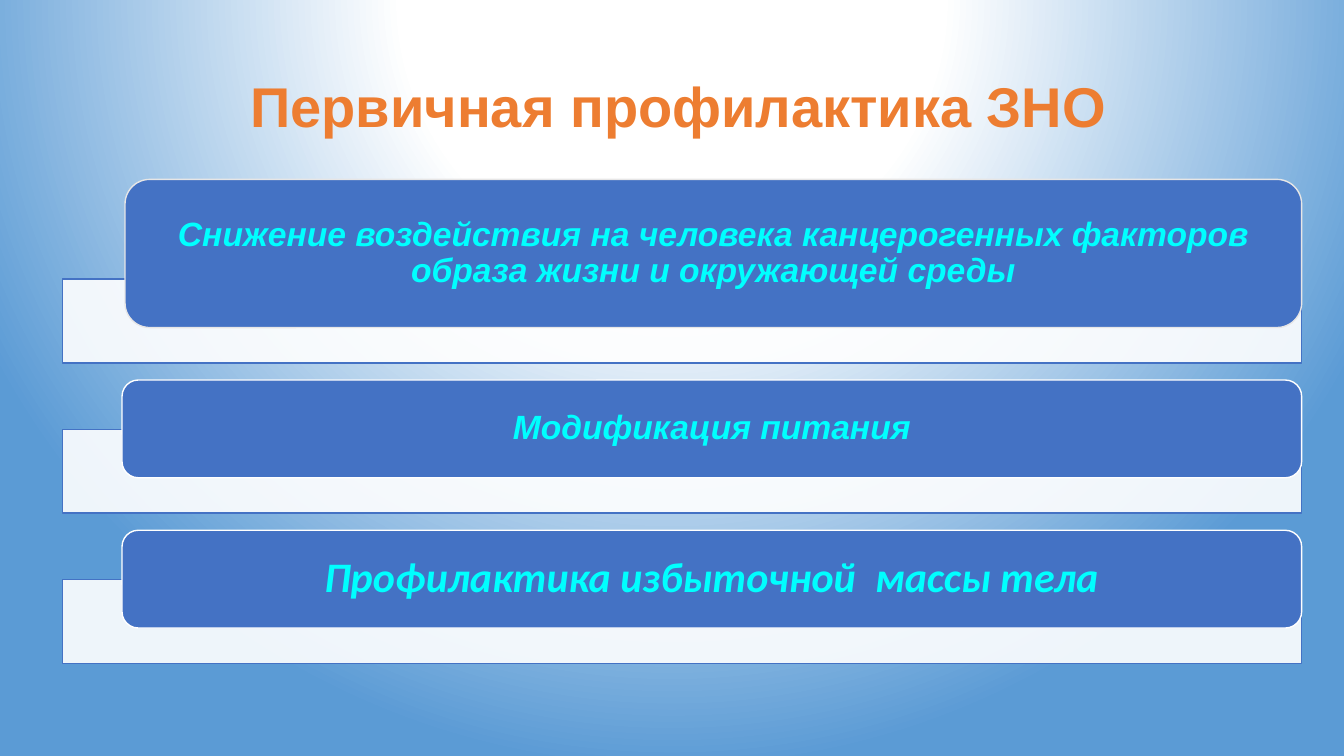
from dataclasses import dataclass

from lxml import etree
from pptx import Presentation
from pptx.dml.color import RGBColor
from pptx.enum.dml import MSO_FILL
from pptx.enum.shapes import MSO_SHAPE
from pptx.enum.text import MSO_ANCHOR, MSO_AUTO_SIZE, PP_ALIGN
from pptx.oxml.ns import qn
from pptx.shapes.autoshape import Shape
from pptx.slide import Slide
from pptx.text.text import TextFrame
from pptx.util import Emu, Inches, Pt

RECTANGLE = MSO_SHAPE.RECTANGLE
ROUNDED = MSO_SHAPE.ROUNDED_RECTANGLE
MIDDLE = MSO_ANCHOR.MIDDLE
NO_AUTOFIT = MSO_AUTO_SIZE.NONE
CENTER = PP_ALIGN.CENTER
GRADIENT = MSO_FILL.GRADIENT

WHITE = RGBColor(0xFF, 0xFF, 0xFF)
SKY = RGBColor(0x5B, 0x9B, 0xD5)
BLUE = RGBColor(0x44, 0x72, 0xC4)
PALE_GREY = RGBColor(0xE7, 0xE6, 0xE6)
ORANGE = RGBColor(0xED, 0x7D, 0x31)
CYAN = RGBColor(0x00, 0xFF, 0xFF)

SLIDE_WIDTH = Inches(13.33)
SLIDE_HEIGHT = Inches(7.5)
TITLE_ONLY = 5

BAR_LEFT = 4.65
RIGHT_EDGE = 96.85
FIRST_BAR_TOP = 36.93
ROW_PITCH = 19.87
BAR_HEIGHT = 11.07
CARD_OVERLAP = 6.4
CARD_INSET = 1.95


@dataclass(frozen=True)
class Measure:
    text: str
    left: float = 9.08
    height: float = 12.93
    outline: RGBColor = WHITE
    font: str = "Arial"
    size: int = 24


MEASURES = [
    Measure(
        "Снижение воздействия на человека канцерогенных факторов образа жизни и окружающей среды",
        left=9.3,
        height=19.6,
        outline=PALE_GREY,
    ),
    Measure("Модификация питания"),
    Measure("Профилактика избыточной  массы тела", font="Calibri", size=30),
]


def across(percent: float) -> Emu:
    return Emu(round(SLIDE_WIDTH * percent / 100))


def down(percent: float) -> Emu:
    return Emu(round(SLIDE_HEIGHT * percent / 100))


def paint_background(slide: Slide) -> None:
    fill = slide.background.fill
    if fill.type != GRADIENT:
        fill.gradient()
    gradient = slide.element.find(".//" + qn("a:gradFill"))
    for child in list(gradient):
        gradient.remove(child)
    stops = etree.SubElement(gradient, qn("a:gsLst"))
    for position, color in ((0, WHITE), (35, WHITE), (100, SKY)):
        stop = etree.SubElement(stops, qn("a:gs"), pos=str(position * 1000))
        etree.SubElement(stop, qn("a:srgbClr"), val=str(color))
    circle = etree.SubElement(gradient, qn("a:path"), {"path": "circle"})
    etree.SubElement(
        circle, qn("a:fillToRect"), l="50000", t="-80000", r="50000", b="180000"
    )


def write_text(
    frame: TextFrame, text: str, font: str, size: int, color: RGBColor, italic: bool
) -> None:
    frame.word_wrap = True
    frame.auto_size = NO_AUTOFIT
    frame.vertical_anchor = MIDDLE
    para = frame.paragraphs[0]
    para.alignment = CENTER
    para.line_spacing = 0.9
    span = para.add_run()
    span.text = text
    span.font.name = font
    span.font.size = Pt(size)
    span.font.bold = True
    span.font.italic = italic
    span.font.color.rgb = color


def add_box(
    slide: Slide,
    kind: MSO_SHAPE,
    left: float,
    top: float,
    height: float,
    fill: RGBColor,
    outline: RGBColor,
) -> Shape:
    box = slide.shapes.add_shape(
        kind, across(left), down(top), across(RIGHT_EDGE - left), down(height)
    )
    box.shadow.inherit = False
    box.fill.solid()
    box.fill.fore_color.rgb = fill
    box.line.color.rgb = outline
    box.line.width = Pt(1)
    return box


def add_measure(slide: Slide, row: int, measure: Measure) -> None:
    bar_top = FIRST_BAR_TOP + row * ROW_PITCH
    bar = add_box(slide, RECTANGLE, BAR_LEFT, bar_top, BAR_HEIGHT, WHITE, BLUE)
    bar_color = bar.element.spPr.find(qn("a:solidFill")).find(qn("a:srgbClr"))
    etree.SubElement(bar_color, qn("a:alpha"), val="90000")

    card_top = bar_top + CARD_OVERLAP - measure.height
    card = add_box(
        slide, ROUNDED, measure.left, card_top, measure.height, BLUE, measure.outline
    )
    frame = card.text_frame
    frame.margin_left = frame.margin_right = across(CARD_INSET)
    frame.margin_top = frame.margin_bottom = 0
    write_text(frame, measure.text, measure.font, measure.size, CYAN, True)


def add_title(slide: Slide) -> None:
    title = slide.shapes.title
    title.left, title.top = across(5.03), down(10.27)
    title.width, title.height = across(90.85), down(8.53)
    write_text(
        title.text_frame, "Первичная профилактика ЗНО", "Arial", 40, ORANGE, False
    )


def main() -> None:
    deck = Presentation()
    deck.slide_width = SLIDE_WIDTH
    deck.slide_height = SLIDE_HEIGHT
    page = deck.slides.add_slide(deck.slide_layouts[TITLE_ONLY])
    paint_background(page)
    add_title(page)
    for row, measure in enumerate(MEASURES):
        add_measure(page, row, measure)
    deck.save("out.pptx")


if __name__ == "__main__":
    main()
